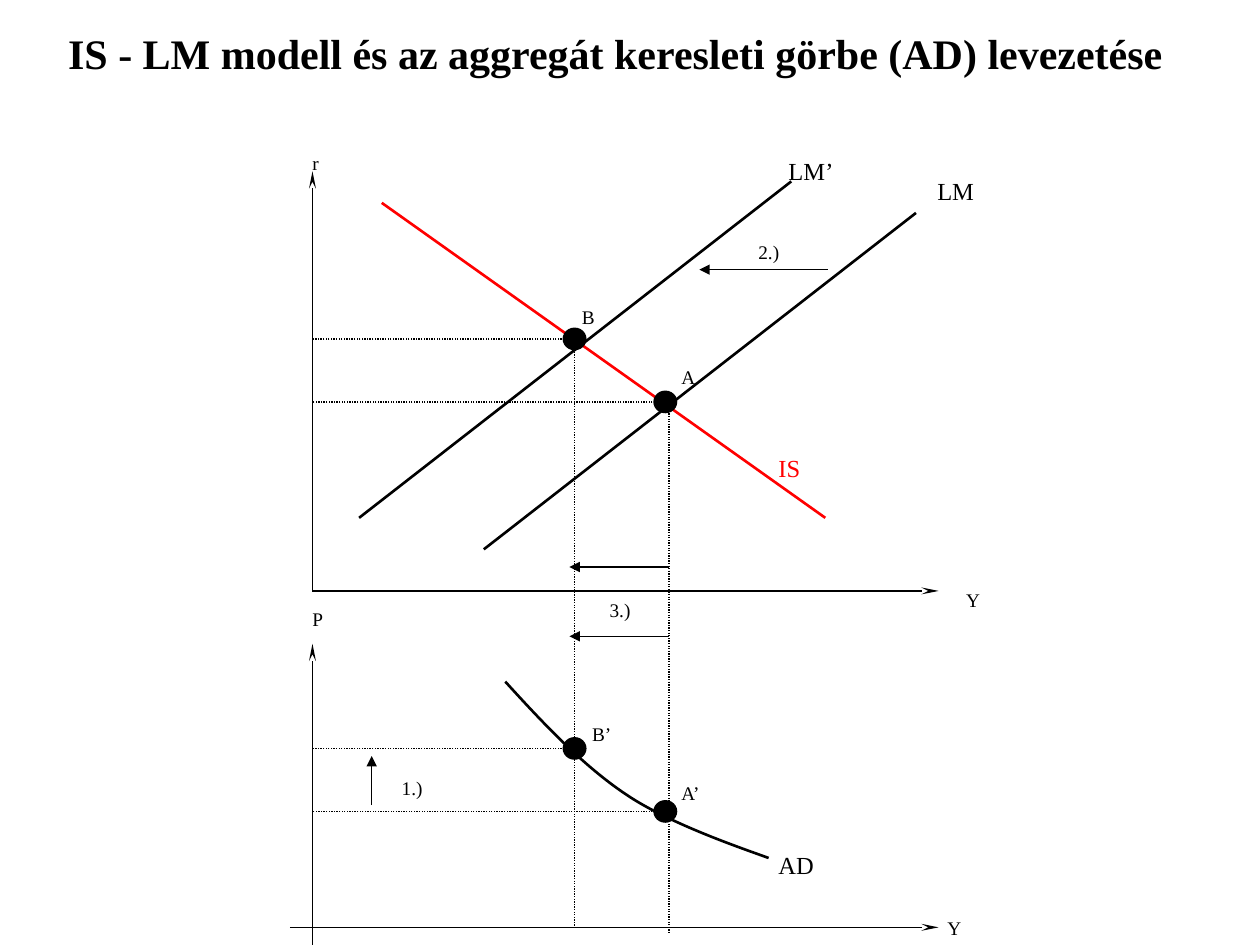
from typing import NamedTuple

from lxml import etree
from pptx import Presentation
from pptx import util as u
from pptx.dml.color import RGBColor
from pptx.enum import dml, shapes, text
from pptx.oxml.ns import qn

COLORS = {"ink": "000000", "is": "FF0000"}
FONT = "Times New Roman"
THIN, THICK = 0.75, 1.5

# Shared positions of the two diagrams
AXIS_X = 2.48
X_B, X_A = 4.56, 5.28
GUIDE_A = 5.31
R_B, R_A = 2.69, 3.19
P_B, P_A = 5.94, 6.44
BASE_TOP, BASE_LOW = 4.69, 7.36


class Line(NamedTuple):
    x1: float
    y1: float
    x2: float
    y2: float
    width: float = THIN
    color: str = "ink"
    head: str = ""
    dotted: bool = False


class Label(NamedTuple):
    words: str
    left: float
    top: float
    width: float
    size: int = 11
    color: str = "ink"


AXES = [
    Line(AXIS_X, BASE_TOP, AXIS_X, 1.36, head="stealth"),
    Line(AXIS_X, BASE_TOP, 7.45, BASE_TOP, head="stealth"),
    Line(AXIS_X, 7.5, AXIS_X, 5.11, head="stealth"),
    Line(2.3, BASE_LOW, 7.45, BASE_LOW, head="stealth"),
]
SCHEDULES = [
    Line(3.03, 1.61, 6.55, 4.11, THICK, "is"),
    Line(2.85, 4.11, 6.28, 1.44, THICK),
    Line(3.84, 4.36, 7.27, 1.69, THICK),
]
POINTS = [(X_A, R_A), (X_B, R_B), (X_A, P_A), (X_B, P_B)]
GUIDES = [
    Line(X_B, R_B, X_B, BASE_LOW, dotted=True),
    Line(GUIDE_A, 3.24, GUIDE_A, 7.41, dotted=True),
] + [Line(x, y, AXIS_X, y, dotted=True) for x, y in POINTS]
SHIFTS = [
    Line(2.95, 6.39, 2.95, 6, head="triangle"),
    Line(6.57, 2.14, 5.55, 2.14, head="triangle"),
    Line(GUIDE_A, 5.05, 4.52, 5.05, head="triangle"),
    Line(GUIDE_A, 4.5, 4.52, 4.5, head="triangle"),
]
# Start point, then three points for each Bézier segment
AD_CURVE = [(4.01, 5.41), (4.31, 5.74), (4.62, 6.07), (4.96, 6.3),
            (5.31, 6.54), (5.91, 6.74), (6.1, 6.81)]
LABELS = [
    Label("A", 5.31, 2.85, 0.31),
    Label("B", 4.52, 2.37, 0.3),
    Label("A’", 5.31, 6.15, 0.36),
    Label("B’", 4.6, 5.68, 0.35),
    Label("1.)", 3.09, 6.11, 0.37),
    Label("2.)", 5.92, 1.86, 0.37),
    Label("3.)", 4.74, 4.7, 0.37),
    Label("Y", 7.57, 4.62, 0.31),
    Label("Y", 7.42, 7.22, 0.31),
    Label("r", 2.38, 1.15, 0.25),
    Label("P", 2.38, 4.77, 0.29),
    Label("AD", 6.08, 6.7, 0.48, 14),
    Label("IS", 6.08, 3.55, 0.37, 14, "is"),
    Label("LM", 7.34, 1.35, 0.49, 14),
    Label("LM’", 6.16, 1.19, 0.56, 14),
]


def rgb(name: str) -> RGBColor:
    return RGBColor.from_string(COLORS[name])


def draw_line(page, line: Line) -> None:
    ends = [u.Inches(n) for n in (line.x1, line.y1, line.x2, line.y2)]
    connector = page.shapes.add_connector(shapes.MSO_CONNECTOR.STRAIGHT, *ends)
    connector.line.width = u.Pt(line.width)
    connector.line.color.rgb = rgb(line.color)
    if line.dotted:
        connector.line.dash_style = dml.MSO_LINE.ROUND_DOT
    if line.head:
        narrow = line.head == "stealth"
        etree.SubElement(connector.line._get_or_add_ln(), qn("a:tailEnd"),
                         type=line.head, w="sm" if narrow else "med",
                         len="lg" if narrow else "med")
    etree.SubElement(connector._element.spPr, qn("a:effectLst"))


def draw_point(page, x: float, y: float) -> None:
    width, height = 0.18, 0.17
    dot = page.shapes.add_shape(
        shapes.MSO_SHAPE.OVAL, u.Inches(x - width / 2), u.Inches(y - height / 2),
        u.Inches(width), u.Inches(height))
    dot.shadow.inherit = False
    dot.fill.solid()
    dot.fill.fore_color.rgb = rgb("ink")
    dot.line.color.rgb = rgb("ink")
    dot.line.width = u.Pt(THIN)


def draw_curve(page, points: list[tuple[float, float]]) -> None:
    corners = [(u.Inches(x), u.Inches(y)) for x, y in points]
    builder = page.shapes.build_freeform(*corners[0])
    builder.add_line_segments(corners[1:], close=False)
    curve = builder.convert_to_shape()
    curve.shadow.inherit = False
    curve.fill.background()
    curve.line.color.rgb = rgb("ink")
    curve.line.width = u.Pt(THICK)
    # Turn each three straight steps into one Bézier segment
    steps = list(curve._element.iter(qn("a:lnTo")))
    for start in range(0, len(steps), 3):
        bezier = etree.SubElement(steps[start].getparent(), qn("a:cubicBezTo"))
        for step in steps[start:start + 3]:
            bezier.append(step[0])
            step.getparent().remove(step)


def write(box, words: str, size: int, color: str = "ink", bold: bool = False) -> None:
    frame = box.text_frame
    frame.text = words
    frame.word_wrap = False
    frame.auto_size = text.MSO_AUTO_SIZE.SHAPE_TO_FIT_TEXT
    frame.vertical_anchor = text.MSO_ANCHOR.TOP
    para = frame.paragraphs[0]
    para.alignment = text.PP_ALIGN.LEFT
    font = para.runs[0].font
    font.name, font.size, font.bold = FONT, u.Pt(size), bold
    font.color.rgb = rgb(color)


def draw_label(page, label: Label) -> None:
    height = 0.28 if label.size == 11 else 0.33
    box = page.shapes.add_textbox(u.Inches(label.left), u.Inches(label.top),
                                  u.Inches(label.width), u.Inches(height))
    write(box, label.words, label.size, label.color)


def main() -> None:
    deck = Presentation()
    deck.slide_width, deck.slide_height = u.Inches(10), u.Inches(7.5)
    page = deck.slides.add_slide(deck.slide_layouts[5])

    # Title
    title = page.shapes.title
    title.left, title.top = u.Inches(0.44), u.Inches(0.17)
    title.width, title.height = u.Inches(8.9), u.Inches(0.5)
    write(title, "IS - LM modell és az aggregát keresleti görbe (AD) levezetése",
          24, bold=True)

    # Diagrams
    for line in AXES + SCHEDULES + GUIDES:
        draw_line(page, line)
    for x, y in POINTS:
        draw_point(page, x, y)
    draw_curve(page, AD_CURVE)

    # Shift arrows and labels
    for line in SHIFTS:
        draw_line(page, line)
    for label in LABELS:
        draw_label(page, label)

    deck.save("out.pptx")


if __name__ == "__main__":
    main()
